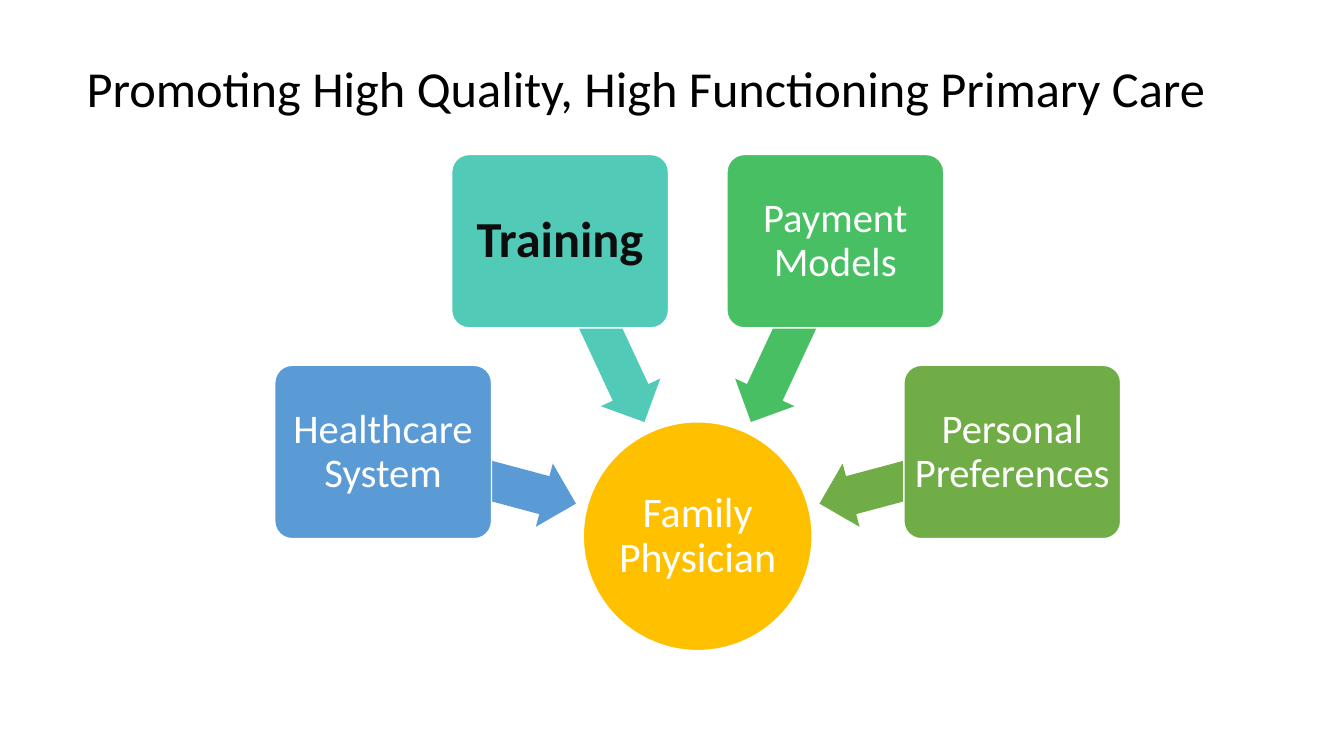
from math import cos, radians, sin

from pptx import Presentation
from pptx.dml.color import RGBColor
from pptx.enum.shapes import MSO_SHAPE as Shape
from pptx.enum.text import MSO_ANCHOR as Anchor, PP_ALIGN as Align
from pptx.util import Inches, Pt

COLORS = {
    "black": "000000", "ink": "0D0D0D", "white": "FFFFFF", "gold": "FFC000",
    "blue": "5B9BD5", "teal": "52CAB8", "green": "49BF64", "olive": "70AD47",
}
HUB_X, HUB_Y = 6.92, 5.32
ARROW_RADIUS, CARD_RADIUS = 2.24, 3.23
INFLUENCES = [
    ("Healthcare System", "blue", 195, {}),
    ("Training", "teal", 245, {"size": 36, "color": "ink", "bold": True}),
    ("Payment Models", "green", 295, {}),
    ("Personal Preferences", "olive", 345, {}),
]


def color_of(name):
    return RGBColor.from_string(COLORS[name])


def write(frame, text, size=29, color="white", bold=False, align=Align.CENTER,
          anchor=Anchor.MIDDLE, inset=(0.04, 0.04)):
    """Fill a text frame with one paragraph; inset is (horizontal, vertical)."""
    frame.word_wrap = True
    frame.vertical_anchor = anchor
    frame.margin_left = frame.margin_right = Inches(inset[0])
    frame.margin_top = frame.margin_bottom = Inches(inset[1])
    paragraph = frame.paragraphs[0]
    paragraph.alignment = align
    paragraph.line_spacing = 0.9
    run = paragraph.add_run()
    run.text = text
    run.font.name = "Calibri"
    run.font.size = Pt(size)
    run.font.bold = bold
    run.font.color.rgb = color_of(color)


class HubDiagram:
    def __init__(self, slide):
        self.slide = slide

    def title(self, text):
        box = self.slide.shapes.add_textbox(
            Inches(0.76), Inches(0.59), Inches(11.82), Inches(0.56))
        write(box.text_frame, text, size=36, color="black", align=Align.LEFT,
              anchor=Anchor.TOP, inset=(0.1, 0.05))

    def centered(self, kind, radius, angle, width, height, fill):
        """Add a shape centred at a radius and clockwise angle from the hub."""
        x = HUB_X + radius * cos(radians(angle))
        y = HUB_Y + radius * sin(radians(angle))
        shape = self.slide.shapes.add_shape(
            kind, Inches(x - width / 2), Inches(y - height / 2),
            Inches(width), Inches(height))
        shape.shadow.inherit = False
        shape.fill.solid()
        shape.fill.fore_color.rgb = color_of(fill)
        return shape

    def outline(self, shape):
        shape.line.color.rgb = color_of("white")
        shape.line.width = Pt(1)

    def hub(self, text):
        circle = self.centered(Shape.OVAL, 0, 0, 2.27, 2.27, "gold")
        self.outline(circle)
        write(circle.text_frame, text, size=30, inset=(0.02, 0.02))

    def arrow(self, angle, fill):
        arrow = self.centered(Shape.LEFT_ARROW, ARROW_RADIUS, angle, 1.98, 0.65, fill)
        arrow.adjustments[0] = 0.6
        arrow.adjustments[1] = 0.5
        arrow.rotation = angle
        arrow.line.fill.background()

    def card(self, text, angle, fill, **text_format):
        card = self.centered(Shape.ROUNDED_RECTANGLE, CARD_RADIUS, angle, 2.15, 1.72, fill)
        card.adjustments[0] = 0.1
        self.outline(card)
        write(card.text_frame, text, **text_format)


def main():
    deck = Presentation()
    deck.slide_width, deck.slide_height = Inches(13.33), Inches(7.5)
    diagram = HubDiagram(deck.slides.add_slide(deck.slide_layouts[6]))
    diagram.title("Promoting High Quality, High Functioning Primary Care")
    diagram.hub("Family Physician")
    for label, fill, angle, text_format in INFLUENCES:
        diagram.arrow(angle, fill)
        # The lower and upper cards sit on the same circle around the hub.
        diagram.card(label, angle, fill, **text_format)
    deck.save("out.pptx")


if __name__ == "__main__":
    main()
